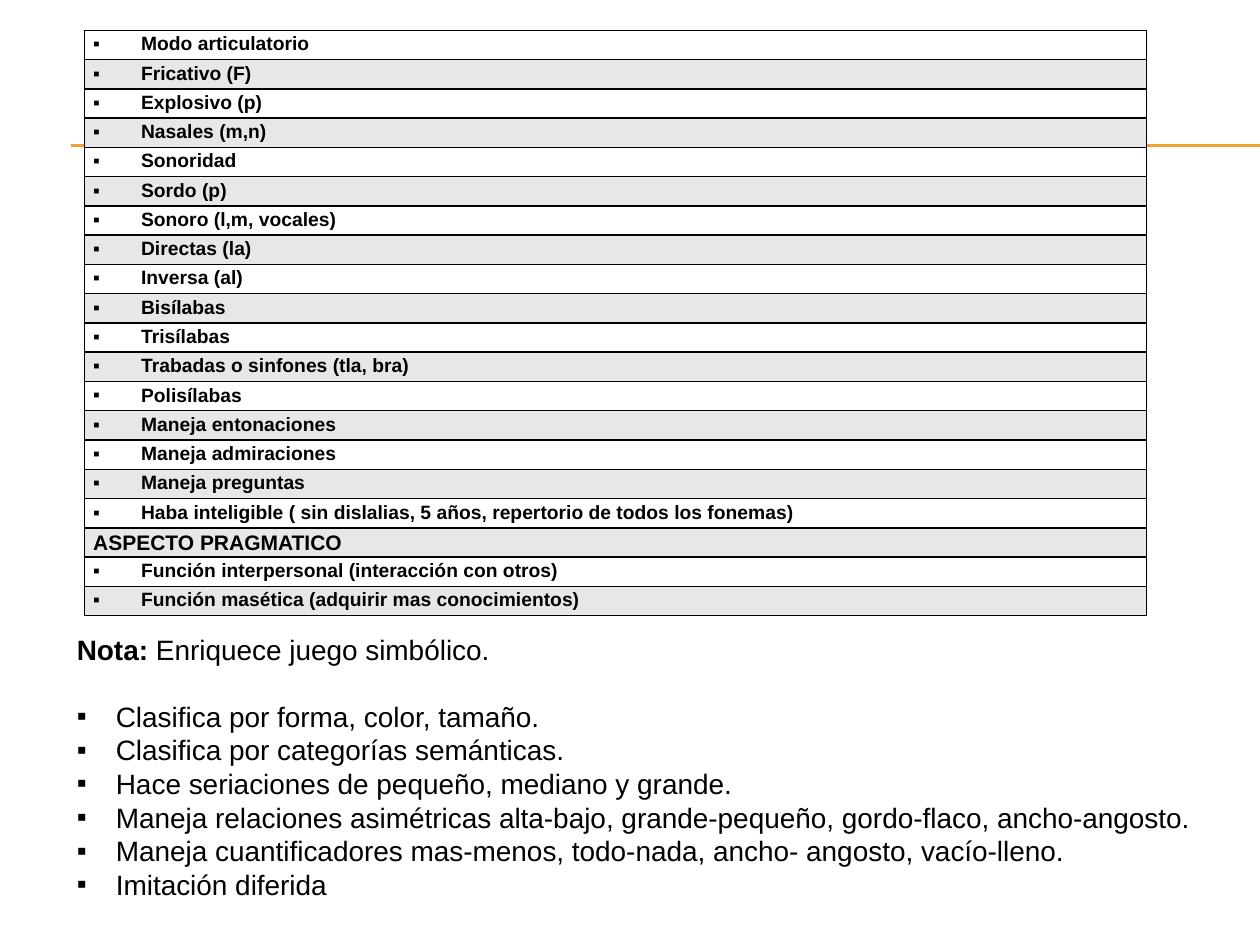
from lxml import etree
from pptx import Presentation
from pptx.dml.color import RGBColor
from pptx.enum import shapes, text
from pptx.oxml.ns import qn
from pptx.util import Inches, Pt


def color(code):
    return RGBColor.from_string(code)


def write(para, words, size=11, bold=False, mark=None, indent=0, lead=1, after=0):
    para.alignment = text.PP_ALIGN.LEFT
    para.line_spacing = lead
    para.space_before = Pt(0)
    para.space_after = Pt(after)
    props = para._p.get_or_add_pPr()
    props.set("marL", str(Inches(indent)))
    props.set("indent", str(Inches(-indent)))
    if mark:
        etree.SubElement(props, qn("a:buFont"), typeface="Arial")
        etree.SubElement(props, qn("a:buChar"), char=mark)
    else:
        etree.SubElement(props, qn("a:buNone"))
    if words:
        run = para.add_run()
        run.text = words
        run.font.name = "Arial"
        run.font.size = Pt(size)
        run.font.bold = bold
        run.font.color.rgb = color("000000")
    else:
        etree.SubElement(para._p, qn("a:endParaRPr"), sz=str(size * 100))


prs = Presentation()
prs.slide_width = Inches(10)
prs.slide_height = Inches(7.5)
slide = prs.slides.add_slide(prs.slide_layouts[1])
title = slide.shapes.title
title.element.getparent().remove(title.element)

for y in (1.15, 1.16):
    rule = slide.shapes.add_connector(
        shapes.MSO_CONNECTOR.STRAIGHT, Inches(0.56), Inches(y), Inches(10), Inches(y))
    rule.line.color.rgb = color("F0A22E")
    rule.line.width = Pt(0.75)
    etree.SubElement(rule._element.spPr, qn("a:effectLst"))

skills = [
    "Clasifica por forma, color, tamaño.",
    "Clasifica por categorías semánticas.",
    "Hace seriaciones de pequeño, mediano y grande.",
    "Maneja relaciones asimétricas alta-bajo, grande-pequeño, gordo-flaco, ancho-angosto.",
    "Maneja cuantificadores mas-menos, todo-nada, ancho- angosto, vacío-lleno.",
    "Imitación diferida",
]
body = slide.placeholders[1]
body.left, body.top = Inches(0.51), Inches(4.97)
body.width, body.height = Inches(9.06), Inches(2.79)
frame = body.text_frame
frame.word_wrap = True
frame.auto_size = text.MSO_AUTO_SIZE.SHAPE_TO_FIT_TEXT
frame.vertical_anchor = text.MSO_ANCHOR.TOP
note = frame.paragraphs[0]
write(note, "Nota:", size=16, bold=True, after=19)
rest = note.add_run()
rest.text = " Enriquece juego simbólico."
rest.font.name = "Arial"
rest.font.size = Pt(16)
rest.font.bold = False
rest.font.color.rgb = color("000000")
for skill in skills:
    write(frame.add_paragraph(), skill, size=16, mark="▪", indent=0.31)

head = "ASPECTO PRAGMATICO"
items = [
    "Modo articulatorio",
    "Fricativo (F)",
    "Explosivo (p)",
    "Nasales (m,n)",
    "Sonoridad",
    "Sordo (p)",
    "Sonoro (l,m, vocales)",
    "Directas (la)",
    "Inversa (al)",
    "Bisílabas",
    "Trisílabas",
    "Trabadas o sinfones (tla, bra)",
    "Polisílabas",
    "Maneja entonaciones",
    "Maneja admiraciones",
    "Maneja preguntas",
    "Haba inteligible ( sin dislalias, 5 años, repertorio de todos los fonemas)",
    head,
    "Función interpersonal (interacción con otros)",
    "Función masética (adquirir mas conocimientos)",
]
widths = [6.74, 0.85, 0.84]
high = 4.65 / len(items)
table = slide.shapes.add_table(
    len(items), len(widths), Inches(0.67), Inches(0.24), Inches(8.43), Inches(4.65)).table
for col, width in zip(table.columns, widths):
    col.width = Inches(width)

for r, item in enumerate(items):
    table.rows[r].height = Inches(high)
    for c in range(len(widths)):
        cell = table.cell(r, c)
        cell.margin_left = cell.margin_right = Inches(0.07)
        cell.margin_top = cell.margin_bottom = 0
        edges = {"L": c == 0, "R": c == len(widths) - 1, "T": True, "B": True}
        for side, shown in edges.items():
            edge = etree.SubElement(
                cell._tc.get_or_add_tcPr(), qn("a:ln" + side), w=str(Pt(1)))
            if shown:
                paint = etree.SubElement(edge, qn("a:solidFill"))
                etree.SubElement(paint, qn("a:srgbClr"), val="000000")
            else:
                etree.SubElement(edge, qn("a:noFill"))
        cell.fill.solid()
        cell.fill.fore_color.rgb = color("E7E7E7" if r % 2 else "FFFFFF")
        para = cell.text_frame.paragraphs[0]
        if c:
            write(para, "")
        elif item == head:
            write(para, item, size=12, bold=True, lead=1.15)
        else:
            write(para, item, bold=True, mark="▪", indent=0.38, lead=1.15)

prs.save("out.pptx")
